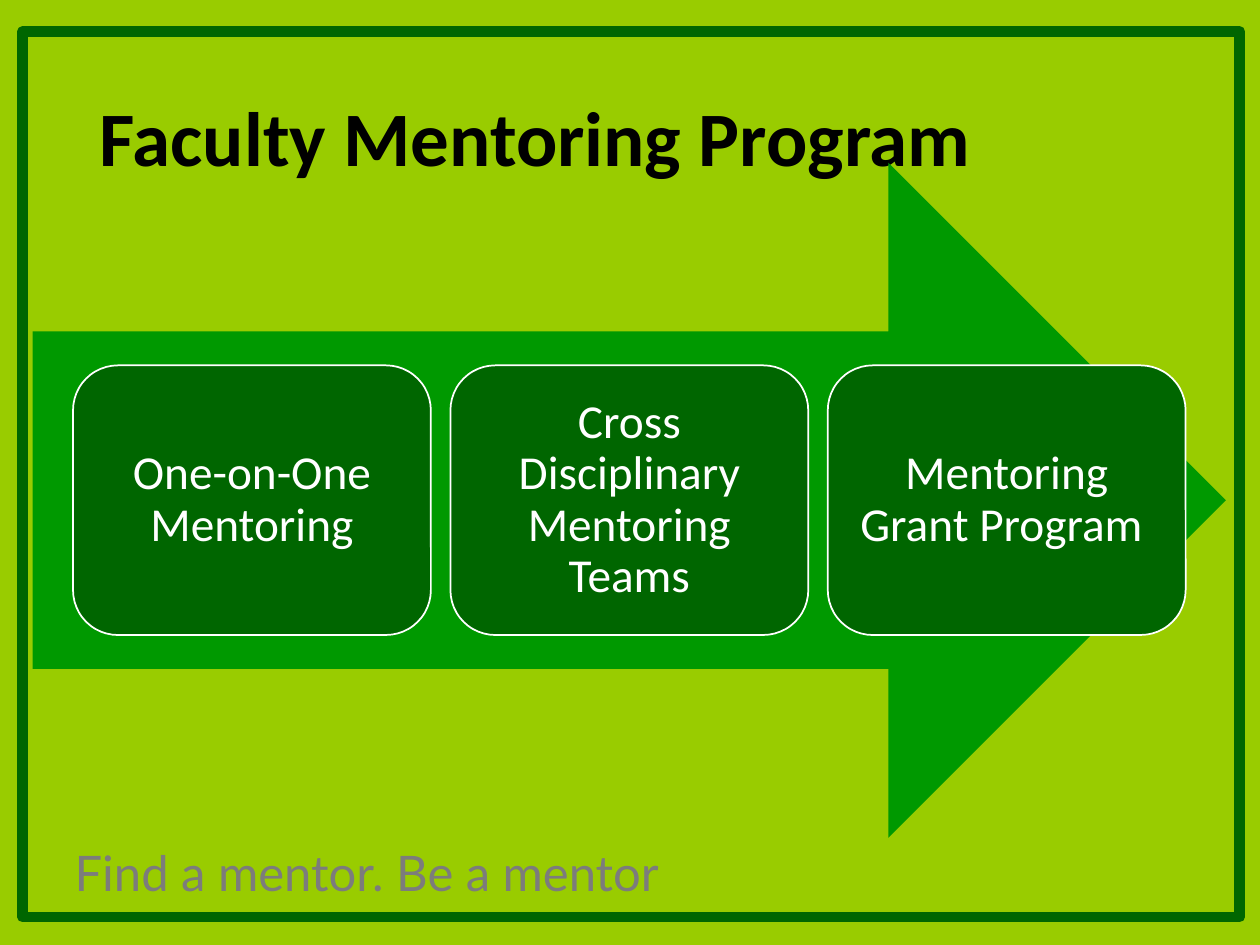
from pptx import Presentation
from pptx.dml.color import RGBColor
from pptx.enum.shapes import MSO_SHAPE
from pptx.enum.text import MSO_ANCHOR, MSO_AUTO_SIZE, PP_ALIGN
from pptx.util import Inches, Pt

RECTANGLE = MSO_SHAPE.RECTANGLE
ARROW = MSO_SHAPE.RIGHT_ARROW
ROUNDED = MSO_SHAPE.ROUNDED_RECTANGLE
MIDDLE = MSO_ANCHOR.MIDDLE
TOP = MSO_ANCHOR.TOP
LEFT = PP_ALIGN.LEFT
CENTER = PP_ALIGN.CENTER
TITLE_ONLY = 5

COLORS = {
    "lime": "99CC00",
    "green": "009900",
    "forest": "006600",
    "white": "FFFFFF",
    "black": "000000",
    "gray": "7C7C7C",
}
PROGRAMS = [
    "One-on-One Mentoring",
    "Cross Disciplinary Mentoring Teams",
    "Mentoring Grant Program ",
]
CARD_LEFT, CARD_STEP = 0.58, 2.995


def color(name):
    """Return the named palette colour."""
    return RGBColor.from_string(COLORS[name])


def add_panel(slide, kind, box, fill=None, line=None, weight=1):
    """Add a flat preset shape with an optional fill and outline."""
    panel = slide.shapes.add_shape(kind, *map(Inches, box))
    panel.shadow.inherit = False
    if fill:
        panel.fill.solid()
        panel.fill.fore_color.rgb = color(fill)
    else:
        panel.fill.background()
    if line:
        panel.line.color.rgb = color(line)
        panel.line.width = Pt(weight)
    else:
        panel.line.fill.background()
    return panel


def write(shape, text, size, ink, font="Calibri", bold=False, align=CENTER,
          anchor=MIDDLE, spacing=0.9, inset=None):
    """Put one formatted paragraph into a shape."""
    frame = shape.text_frame
    frame.word_wrap = True
    frame.vertical_anchor = anchor
    if inset is not None:
        for side in ("left", "top", "right", "bottom"):
            setattr(frame, f"margin_{side}", Inches(inset))
    paragraph = frame.paragraphs[0]
    paragraph.alignment = align
    paragraph.line_spacing = spacing
    run = paragraph.add_run()
    run.text = text
    style = {"name": font, "size": Pt(size), "bold": bold}
    for attribute, value in style.items():
        setattr(run.font, attribute, value)
    run.font.color.rgb = color(ink)
    return frame


def add_title(slide, text):
    """Place and fill the title placeholder."""
    title = slide.shapes.title
    title.left, title.top, title.width, title.height = map(
        Inches, (0.69, 0.4, 8.62, 1.45))
    frame = write(title, text, 44, "black", bold=True, align=LEFT)
    frame.auto_size = MSO_AUTO_SIZE.NONE


def add_program_cards(slide):
    """Lay the mentoring programs out in an even row."""
    for index, program in enumerate(PROGRAMS):
        box = (CARD_LEFT + index * CARD_STEP, 2.9, 2.84, 2.14)
        card = add_panel(slide, ROUNDED, box, "forest", "white")
        write(card, program, 27, "white", inset=0.11)


def add_tagline(slide, text):
    """Add the closing line below the arrow."""
    tagline = slide.shapes.add_textbox(
        *map(Inches, (-0.5, 6.64, 6.82, 0.57)))
    frame = write(tagline, text, 28, "gray", font="Lato", anchor=TOP, spacing=1.0)
    frame.auto_size = MSO_AUTO_SIZE.SHAPE_TO_FIT_TEXT


def main():
    """Build and save the slide."""
    deck = Presentation()
    deck.slide_width, deck.slide_height = Inches(10), Inches(7.5)
    slide = deck.slides.add_slide(deck.slide_layouts[TITLE_ONLY])
    slide.background.fill.solid()
    slide.background.fill.fore_color.rgb = color("lime")
    add_panel(slide, RECTANGLE, (0.18, 0.25, 9.66, 7.03), line="forest", weight=6)
    add_title(slide, "Faculty Mentoring Program")
    add_panel(slide, ARROW, (0.26, 1.29, 9.47, 5.36), "green")
    add_program_cards(slide)
    add_tagline(slide, "Find a mentor. Be a mentor")
    deck.save("out.pptx")


if __name__ == "__main__":
    main()
